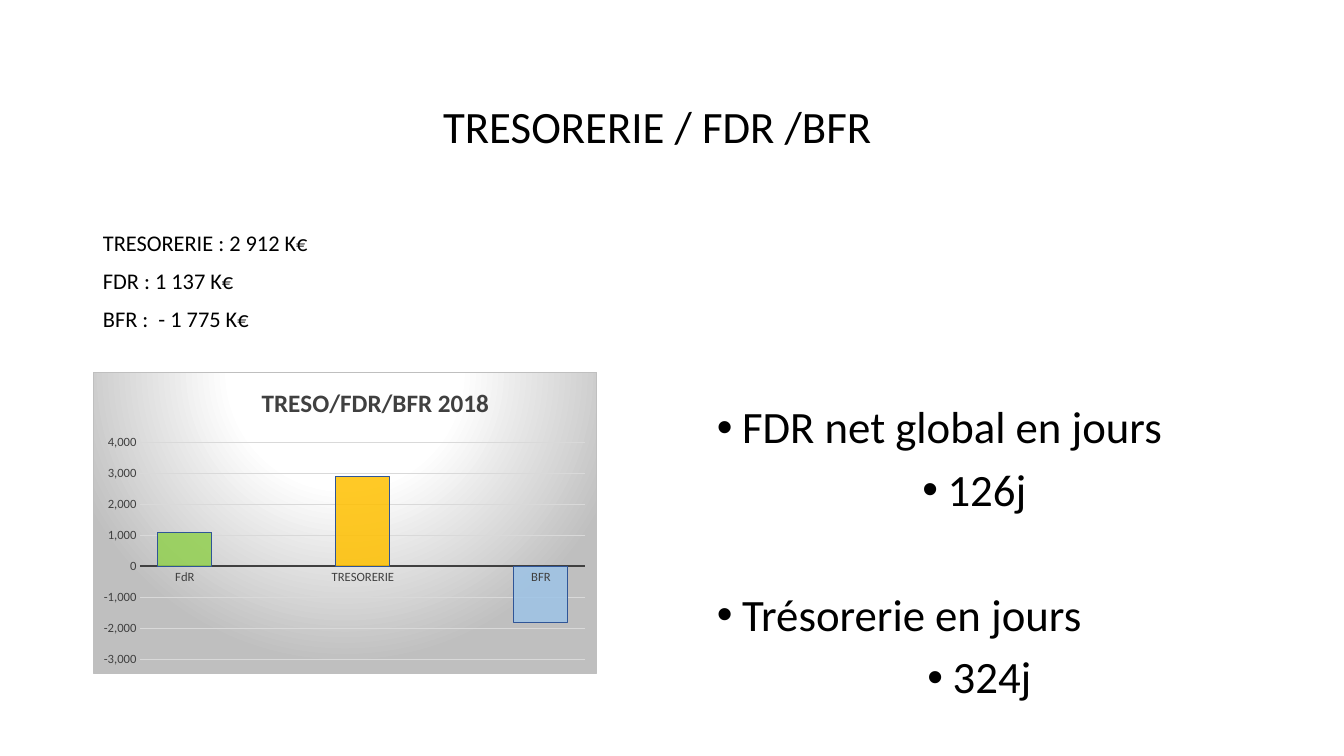
from dataclasses import dataclass

from pptx import Presentation
from pptx.chart.data import CategoryChartData as ChartData
from pptx.dml.color import RGBColor as RGB
from pptx.enum.chart import XL_CHART_TYPE as Kind, XL_TICK_MARK as Tick
from pptx.enum.text import MSO_ANCHOR as Anchor, PP_ALIGN as Align
from pptx.oxml import parse_xml
from pptx.oxml.ns import nsdecls, qn
from pptx.util import Emu, Pt

SCALE = 914400 / 100.8  # EMU in one px


@dataclass(frozen=True)
class Theme:
    font: str = "Calibri"
    mark: str = "Arial"
    text: str = "000000"
    axis: str = "404040"
    grid: str = "D9D9D9"
    edge: str = "BFBFBF"
    glow: str = "FFFFFF"
    base: str = "4472C4"
    rim: str = "2F5597"
    bars: tuple = ("92D050", "FFC000", "9DC3E6")
    big: int = 32
    small: int = 16
    head: int = 18
    chart: int = 10
    label: int = 9


THEME = Theme()


def px(num):
    return Emu(round(num * SCALE))


def put(item, vals):
    for name, val in vals.items():
        setattr(item, name, val)


def style(font, size, color=THEME.text, bold=False):
    put(font, {"name": THEME.font, "size": Pt(size), "bold": bold})
    font.color.rgb = RGB.from_string(color)


def stroke(line, color, width):
    line.color.rgb = RGB.from_string(color)
    line.width = Pt(width)


def bullet(para):
    props = para._p.get_or_add_pPr()
    props.set("marL", "228600")
    props.set("indent", "-228600")
    for tag in (f'buFont {nsdecls("a")} typeface="{THEME.mark}"',
                f'buChar {nsdecls("a")} char="•"'):
        props.append(parse_xml(f"<a:{tag}/>"))


def add_title(slide, text, box):
    title = slide.shapes.title
    put(title, dict(zip(("left", "top", "width", "height"), map(px, box))))
    frame = title.text_frame
    put(frame, {"text": text, "vertical_anchor": Anchor.BOTTOM})
    para = frame.paragraphs[0]
    put(para, {"alignment": Align.CENTER, "line_spacing": 0.9})
    style(para.runs[0].font, THEME.big)


def add_text(slide, box, rows, size, dots=False):
    """Write rows of (text, alignment, space before in points)."""
    frame = slide.shapes.add_textbox(*map(px, box)).text_frame
    frame.word_wrap = True
    for num, (text, align, gap) in enumerate(rows):
        para = frame.add_paragraph() if num else frame.paragraphs[0]
        put(para, {"text": text, "alignment": align,
                   "line_spacing": 0.9, "space_before": Pt(gap)})
        style(para.runs[0].font, size)
        if dots:
            bullet(para)


def set_layout(owner, spot, box, place, inner=""):
    """Fix a chart part at a place in px, counted from the chart's corner."""
    for old in owner.findall(qn("c:layout")):
        owner.remove(old)
    modes = "".join(f'<c:{key}Mode val="edge"/>' for key in "xy")
    vals = "".join(f'<c:{key} val="{num / full}"/>'
                   for key, num, full in zip("xywh", place, box[2:] * 2))
    owner.insert(spot, parse_xml(
        f'<c:layout {nsdecls("c")}><c:manualLayout>{inner}{modes}{vals}'
        '</c:manualLayout></c:layout>'))


def fill_area(chart):
    stops = ((0, THEME.glow), (39, THEME.glow), (100, THEME.edge))
    marks = "".join(f'<a:gs pos="{pos * 1000}"><a:srgbClr val="{color}"/></a:gs>'
                    for pos, color in stops)
    chart.element.find(qn("c:chart")).addnext(parse_xml(
        f'<c:spPr {nsdecls("c", "a")}><a:gradFill><a:gsLst>{marks}</a:gsLst>'
        '<a:path path="circle"><a:fillToRect l="50000" t="-80000" r="50000" '
        'b="180000"/></a:path></a:gradFill><a:ln w="9525"><a:solidFill>'
        f'<a:srgbClr val="{THEME.edge}"/></a:solidFill></a:ln></c:spPr>'))


def paint(part, color):
    part.format.fill.solid()
    part.format.fill.fore_color.rgb = RGB.from_string(color)
    stroke(part.format.line, THEME.rim, 0.75)


def set_bars(chart):
    plot = chart.plots[0]
    put(plot, {"gap_width": 65, "vary_by_categories": False})
    bars = plot.series[0]
    bars.invert_if_negative = False
    paint(bars, THEME.base)
    for num, color in enumerate(THEME.bars):
        paint(bars.points[2 * num], color)
    for color in chart.element.xpath(".//c:ser//c:spPr/a:solidFill/a:srgbClr"):
        color.append(parse_xml(f'<a:alpha {nsdecls("a")} val="85000"/>'))


def set_axes(chart):
    cat, val = chart.category_axis, chart.value_axis
    for axis in (cat, val):
        put(axis, {"major_tick_mark": Tick.NONE, "minor_tick_mark": Tick.NONE})
        style(axis.tick_labels.font, THEME.label, THEME.axis)
    stroke(cat.format.line, THEME.axis, 1.5)
    val.format.line.fill.background()
    put(val, {"minimum_scale": -3000, "maximum_scale": 4000, "major_unit": 1000})
    put(val.tick_labels, {"number_format": "#,##0",
                          "number_format_is_linked": False})
    stroke(val.major_gridlines.format.line, THEME.grid, 0.75)


def add_bars(slide, box, title, cats, vals):
    data = ChartData()
    data.categories = cats
    data.add_series("Series 1", vals)
    chart = slide.shapes.add_chart(
        Kind.COLUMN_CLUSTERED, *map(px, box), data).chart
    chart.has_legend = False
    style(chart.font, THEME.chart)
    frame = chart.chart_title.text_frame
    frame.text = title
    style(frame.paragraphs[0].runs[0].font, THEME.head, THEME.axis, True)
    set_bars(chart)
    set_axes(chart)
    fill_area(chart)
    root = chart.element.find(qn("c:chart"))
    set_layout(root.find(qn("c:title")), 1, box, (164, 8))
    set_layout(root.find(qn("c:plotArea")), 0, box, (47, 70, 446, 218),
               '<c:layoutTarget val="inner"/>')


def main():
    deck = Presentation()
    put(deck, {"slide_width": px(1344), "slide_height": px(756)})
    slide = deck.slides.add_slide(deck.slide_layouts[5])
    add_title(slide, "TRESORERIE / FDR /BFR", (93, 50, 1129, 108))
    days = (("FDR net global en jours", Align.LEFT, 10),
            ("126j ", Align.CENTER, 10),
            ("Trésorerie en jours", Align.LEFT, 55),
            ("324j", Align.CENTER, 10))
    add_text(slide, (707, 400, 545, 328), days, THEME.big, dots=True)
    sums = ("TRESORERIE : 2 912 K€", "FDR : 1 137 K€", "BFR :  - 1 775 K€")
    add_text(slide, (93, 227, 433, 420),
             [(text, Align.LEFT, 10) for text in sums], THEME.small)
    add_bars(slide, (93, 372, 504, 302), "TRESO/FDR/BFR 2018",
             ("FdR", "", "TRESORERIE", "", "BFR"),
             (1100, None, 2900, None, -1800))
    deck.save("out.pptx")


if __name__ == "__main__":
    main()
